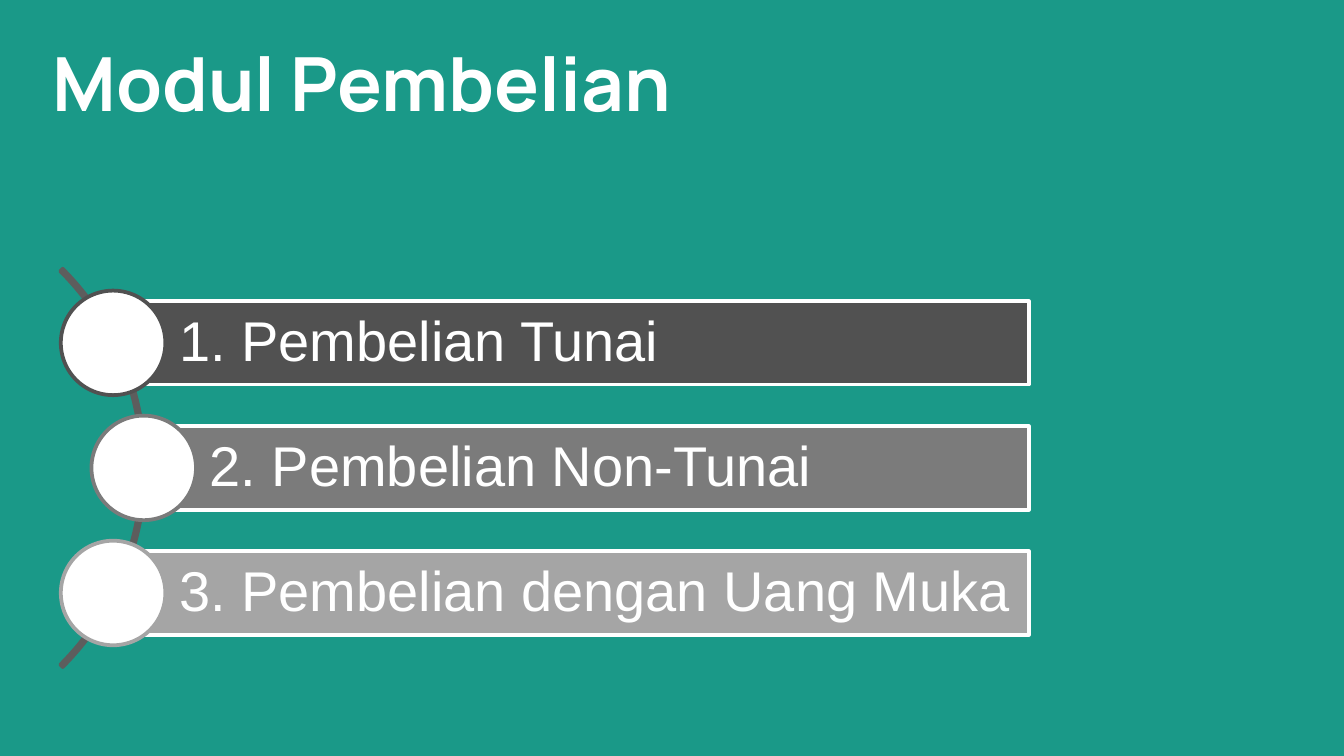
from pptx import Presentation
from pptx import util as u
from pptx.dml import color
from pptx.enum import shapes, text

WHITE = "FFFFFF"
TEAL = "1A9988"
ARC_GRAY = "5D5D5D"
MODULES = [
    ("1. Pembelian Tunai", "515151", 60.6),
    ("2. Pembelian Non-Tunai", "7B7B7B", 77),
    ("3. Pembelian dengan Uang Muka", "A5A5A5", 60.6),
]
MIDDLE = 250.7
ROW_PITCH = 67
BAR_RIGHT = 551.2
BAR_HEIGHT = 44.7
CIRCLE_SIZE = 56
ARC_LEFT = -223.9
ARC_SIZE = 301.7


def rgb(hex_color):
    return color.RGBColor.from_string(hex_color)


def add_outlined(slide, kind, left, top, width, height, fill, line):
    shape = slide.shapes.add_shape(
        kind, u.Pt(left), u.Pt(top), u.Pt(width), u.Pt(height))
    shape.shadow.inherit = False
    if fill:
        shape.fill.solid()
        shape.fill.fore_color.rgb = rgb(fill)
    else:
        shape.fill.background()
    shape.line.color.rgb = rgb(line)
    shape.line.width = u.Pt(2)
    return shape


def set_text(shape, wording, font_name, size, anchor, margins, bold=False):
    frame = shape.text_frame
    frame.word_wrap = True
    frame.vertical_anchor = anchor
    left, top, right, bottom = margins
    frame.margin_left, frame.margin_top = u.Pt(left), u.Pt(top)
    frame.margin_right, frame.margin_bottom = u.Pt(right), u.Pt(bottom)
    paragraph = frame.paragraphs[0]
    paragraph.text = wording
    paragraph.alignment = text.PP_ALIGN.LEFT
    paragraph.font.name = font_name
    paragraph.font.size = u.Pt(size)
    paragraph.font.bold = bold
    paragraph.font.color.rgb = rgb(WHITE)
    return paragraph


def add_title(slide, wording):
    title = slide.shapes.add_textbox(
        u.Pt(21), u.Pt(23), u.Pt(528.5), u.Pt(52))
    set_text(title, wording, "Manrope", 40, text.MSO_ANCHOR.BOTTOM,
             (7.2, 7.2, 7.2, 7.2), bold=True)


def add_arc(slide):
    arc = add_outlined(
        slide, shapes.MSO_SHAPE.BLOCK_ARC, ARC_LEFT, MIDDLE - ARC_SIZE / 2,
        ARC_SIZE, ARC_SIZE, None, ARC_GRAY)
    for index, value in enumerate((189, 27, 0.006)):
        arc.adjustments[index] = value


def add_module(slide, wording, shade, left, center_y):
    bar = add_outlined(
        slide, shapes.MSO_SHAPE.RECTANGLE, left, center_y - BAR_HEIGHT / 2,
        BAR_RIGHT - left, BAR_HEIGHT, shade, WHITE)
    label = set_text(bar, wording, "Arial", 30, text.MSO_ANCHOR.MIDDLE,
                     (35.4, 5.8, 5.8, 5.8))
    label.line_spacing = 0.9
    radius = CIRCLE_SIZE / 2
    add_outlined(slide, shapes.MSO_SHAPE.OVAL, left - radius,
                 center_y - radius, CIRCLE_SIZE, CIRCLE_SIZE, WHITE, shade)


def main():
    deck = Presentation()
    deck.slide_width, deck.slide_height = u.Pt(720), u.Pt(405)
    slide = deck.slides.add_slide(deck.slide_layouts[6])
    slide.background.fill.solid()
    slide.background.fill.fore_color.rgb = rgb(TEAL)

    add_title(slide, "Modul Pembelian")
    add_arc(slide)
    for row, (wording, shade, left) in enumerate(MODULES):
        add_module(slide, wording, shade, left, MIDDLE + (row - 1) * ROW_PITCH)
    deck.save("out.pptx")


if __name__ == "__main__":
    main()
